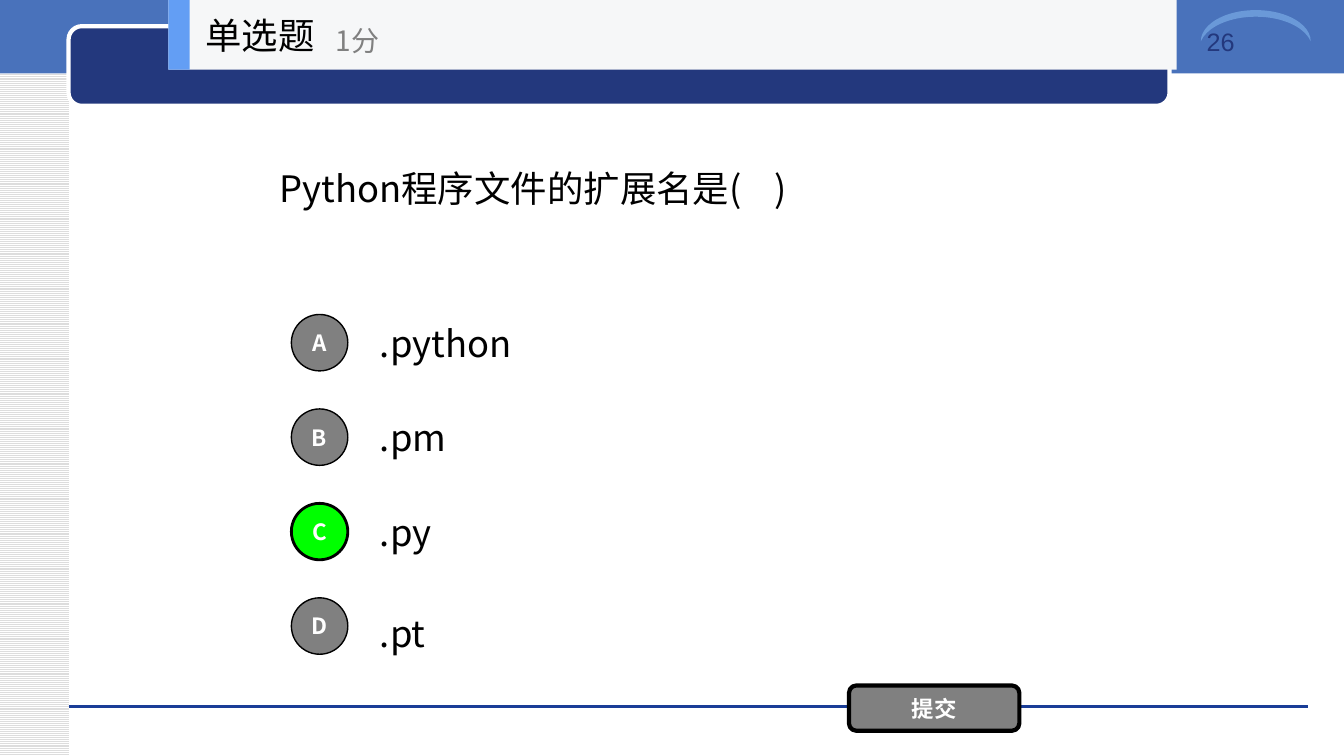
from lxml.etree import SubElement
from pptx import Presentation
from pptx.dml.color import RGBColor
from pptx.enum.dml import MSO_PATTERN
from pptx.enum.shapes import MSO_CONNECTOR, MSO_SHAPE as Preset
from pptx.enum.text import MSO_ANCHOR as Anchor, MSO_AUTO_SIZE, PP_ALIGN as Align
from pptx.oxml.ns import qn
from pptx.util import Inches, Pt

SANS = "Noto Sans CJK SC"
BLACK, WHITE, GREY, NAVY, GREEN = "000000", "FFFFFF", "808080", "23387D", "00FF00"
OPTIONS = [
    ("A", ".python", GREY, 1, -0.07),
    ("B", ".pm", GREY, 1, -0.07),
    ("C", ".py", GREEN, 2, -0.07),
    ("D", ".pt", GREY, 1, 0),
]


def color(value):
    return RGBColor.from_string(value)


def inches(box):
    return [Inches(length) for length in box]


def write(shape, text, size, hue, font=SANS, bold=False,
          align=Align.LEFT, anchor=Anchor.MIDDLE, margin=None):
    frame = shape.text_frame
    layout = {"word_wrap": True, "auto_size": MSO_AUTO_SIZE.NONE, "vertical_anchor": anchor}
    if margin is not None:
        layout.update({f"margin_{side}": Inches(margin)
                       for side in ("left", "top", "right", "bottom")})
    for name, value in layout.items():
        setattr(frame, name, value)
    para = frame.paragraphs[0]
    para.alignment = align
    span = para.add_run()
    span.text = text
    for name, value in {"name": font, "size": Pt(size), "bold": bold}.items():
        setattr(span.font, name, value)
    span.font.color.rgb = color(hue)
    SubElement(span.font._element, qn("a:ea"), typeface=font)


def add_label(shapes, box, text, size, hue, **formats):
    write(shapes.add_textbox(*inches(box)), text, size, hue, **formats)


def add_block(shapes, preset, box, fill, line=None, width=1):
    block = shapes.add_shape(preset, *inches(box))
    block.shadow.inherit = False
    block.fill.solid()
    block.fill.fore_color.rgb = color(fill)
    if line:
        block.line.color.rgb = color(line)
        block.line.width = Pt(width)
    else:
        block.line.fill.background()
    return block


def add_button(shapes, preset, box, text, fill, width):
    button = add_block(shapes, preset, box, fill, BLACK, width)
    write(button, text, 16, WHITE, bold=True, align=Align.CENTER, margin=0)


def draw_backdrop(page, width, height):
    shapes = page.shapes
    margin = 0.68
    stripes = add_block(shapes, Preset.RECTANGLE, (0, 0, margin, height), WHITE)
    stripes.fill.patterned()
    stripes.fill.pattern = MSO_PATTERN.LIGHT_HORIZONTAL
    stripes.fill.fore_color.rgb = color("DDDDDD")
    stripes.fill.back_color.rgb = color(WHITE)
    add_block(shapes, Preset.RECTANGLE, (0, -0.03, width, 0.76), "4972BB")
    rule = shapes.add_connector(MSO_CONNECTOR.STRAIGHT, *inches((margin, 7.01, 12.97, 7.01)))
    rule.line.color.rgb = color("1A3D97")
    rule.line.width = Pt(0)
    SubElement(rule._element.spPr, qn("a:effectLst"))
    add_block(shapes, Preset.ROUNDED_RECTANGLE, (margin, 0.26, 10.92, 0.79), NAVY, WHITE, 3)
    moon = add_block(shapes, Preset.MOON, (12.3, -0.29, 0.31, 1.09), "6A99D8")
    moon.rotation = 90
    moon.adjustments[0] = 0.212
    add_label(shapes, (11.87, 0.21, 1.21, 0.71), "26", 18, NAVY,
              font="Arial", anchor=Anchor.TOP)


def draw_question(page, box, text):
    title = page.shapes.title
    for name, value in zip(("left", "top", "width", "height"), inches(box)):
        setattr(title, name, value)
    write(title, text, 26, BLACK)


def draw_options(page, left, top, pitch):
    for row, (letter, answer, fill, width, shift) in enumerate(OPTIONS):
        y = top + row * pitch
        add_label(page.shapes, (left + 0.78, y + shift, 7, 0.7), answer, 26, BLACK)
        add_button(page.shapes, Preset.OVAL, (left, y, 0.56, 0.56), letter, fill, width)


def draw_header(page, left, top, width, height):
    shapes = page.shapes.add_group_shape().shapes
    add_block(shapes, Preset.RECTANGLE, (left, top, width, height), "F6F7F8")
    add_block(shapes, Preset.RECTANGLE, (left, top, 0.21, height), "639EF4")
    add_label(shapes, (left + 0.27, top, 2.08, height), "单选题", 26, BLACK)
    add_label(shapes, (left + 1.56, top + 0.12, 2.5, 0.56), "1分", 20, GREY)


def main():
    deck = Presentation()
    deck.slide_width, deck.slide_height = Inches(13.33), Inches(7.5)
    page = deck.slides.add_slide(deck.slide_layouts[5])
    draw_backdrop(page, 13.33, 7.5)
    draw_question(page, (2.67, 0.69, 8, 2.34), "Python程序文件的扩展名是(    )")
    draw_options(page, 2.89, 3.12, 0.937)
    add_button(page.shapes, Preset.ROUNDED_RECTANGLE, (8.42, 6.8, 1.69, 0.45), "提交", GREY, 3)
    draw_header(page, 1.67, 0, 10, 0.69)
    deck.save("out.pptx")


if __name__ == "__main__":
    main()
